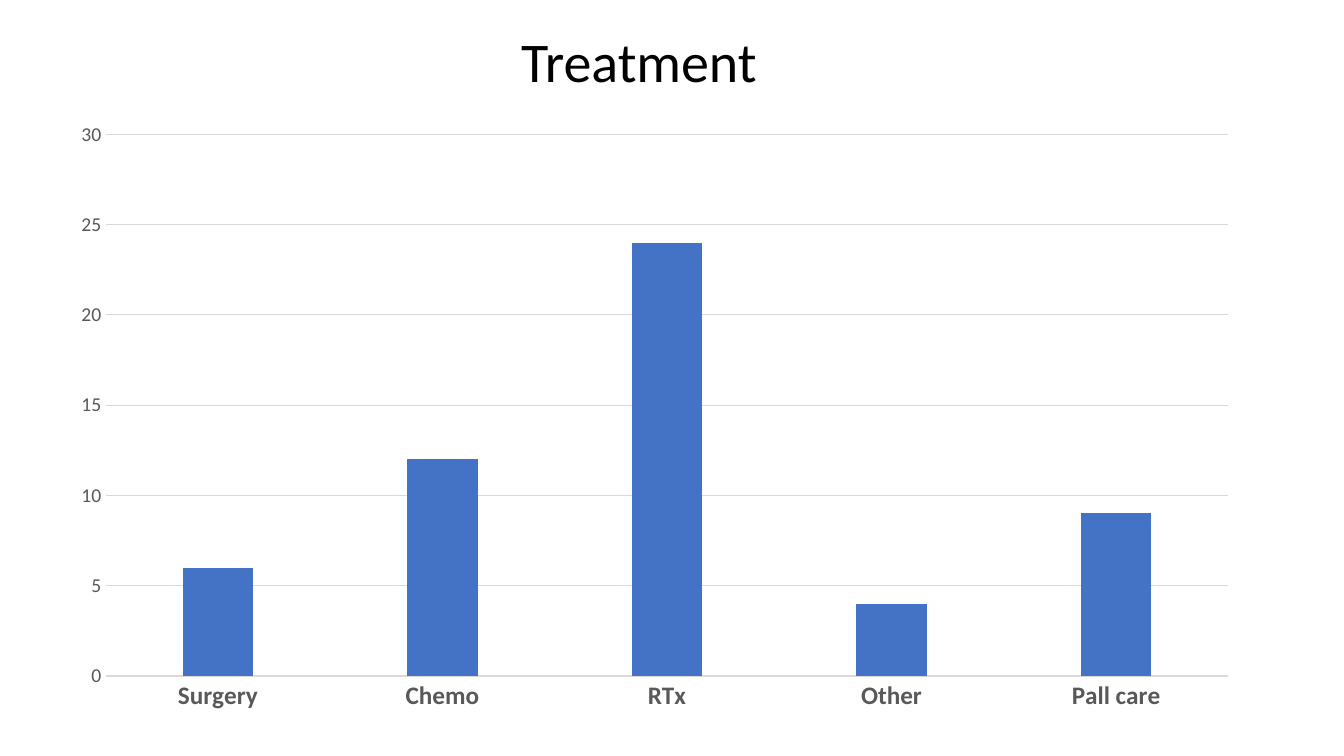
from pptx import Presentation
from pptx.chart.data import CategoryChartData
from pptx.dml.color import RGBColor
from pptx.enum.chart import XL_CHART_TYPE, XL_TICK_MARK
from pptx.enum.text import MSO_AUTO_SIZE
from pptx.util import Inches, Pt

FONT = "Calibri"
BLACK, GREY, PALE, BLUE = "000000", "595959", "D9D9D9", "4472C4"
COUNTS = {"Surgery": 6, "Chemo": 12, "RTx": 24, "Other": 4, "Pall care": 9}


def color(code):
    return RGBColor.from_string(code)


def style(font, size, code, bold=False):
    font.name = FONT
    font.size = Pt(size)
    font.bold = bold
    font.color.rgb = color(code)


def rule(line):
    line.color.rgb = color(PALE)
    line.width = Pt(0.75)


def add_title(slide, box, text):
    frame = slide.shapes.add_textbox(*map(Inches, box)).text_frame
    frame.word_wrap = True
    frame.auto_size = MSO_AUTO_SIZE.SHAPE_TO_FIT_TEXT
    frame.text = text
    style(frame.paragraphs[0].runs[0].font, 40, BLACK)


def add_bars(slide, box, counts):
    data = CategoryChartData()
    data.categories = list(counts)
    data.add_series("Series 1", list(counts.values()))
    chart = slide.shapes.add_chart(
        XL_CHART_TYPE.COLUMN_CLUSTERED, *map(Inches, box), data).chart
    chart.has_title = False
    chart.has_legend = False
    style(chart.font, 10, BLACK)

    # Columns
    plot = chart.plots[0]
    plot.vary_by_categories = False
    plot.gap_width = 219
    plot.overlap = -27
    fill = plot.series[0].format.fill
    fill.solid()
    fill.fore_color.rgb = color(BLUE)

    # Axes
    base, scale = chart.category_axis, chart.value_axis
    for axis in (base, scale):
        axis.major_tick_mark = XL_TICK_MARK.NONE
        axis.minor_tick_mark = XL_TICK_MARK.NONE
    style(base.tick_labels.font, 18, GREY, True)
    rule(base.format.line)
    style(scale.tick_labels.font, 14, GREY)
    scale.format.line.fill.background()
    scale.minimum_scale, scale.maximum_scale = 0, 30
    scale.major_unit = 5
    rule(scale.major_gridlines.format.line)


def main():
    deck = Presentation()
    deck.slide_width, deck.slide_height = Inches(13.33), Inches(7.5)
    slide = deck.slides.add_slide(deck.slide_layouts[6])
    add_bars(slide, (0.57, 1.09, 11.85, 6.08), COUNTS)
    add_title(slide, (5.07, 0.21, 2.7, 0.78), "Treatment")
    deck.save("out.pptx")


if __name__ == "__main__":
    main()
